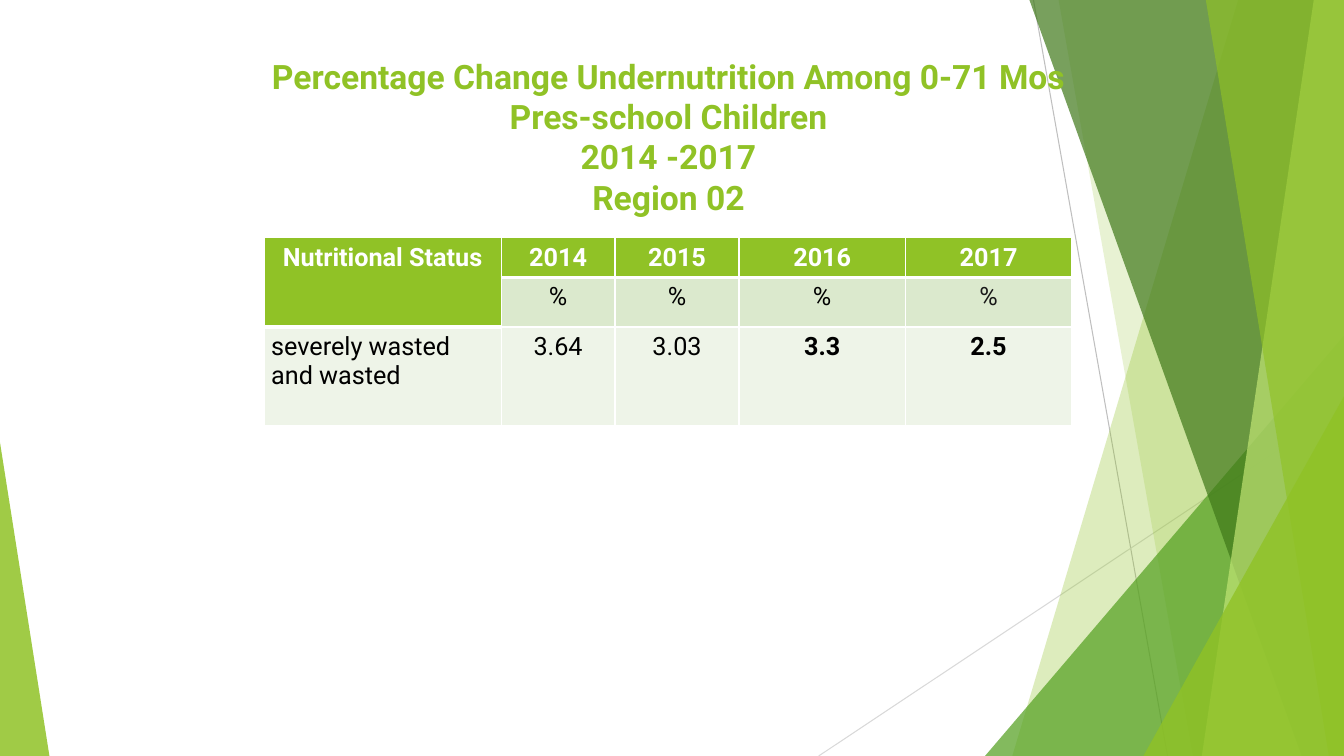
from lxml import etree
from pptx import Presentation
from pptx.dml.color import RGBColor
from pptx.enum.shapes import MSO_CONNECTOR, MSO_SHAPE
from pptx.enum.text import MSO_ANCHOR, PP_ALIGN
from pptx.oxml.ns import qn
from pptx.util import Inches, Pt

STRAIGHT = MSO_CONNECTOR.STRAIGHT
TRIANGLE = MSO_SHAPE.ISOSCELES_TRIANGLE
TOP = MSO_ANCHOR.TOP
LEFT, CENTER = PP_ALIGN.LEFT, PP_ALIGN.CENTER

LIME = RGBColor(0x90, 0xC2, 0x26)
GREEN = RGBColor(0x54, 0xA0, 0x21)
FOREST = RGBColor(0x3F, 0x78, 0x19)
PALE = RGBColor(0xC0, 0xE4, 0x74)
BAND = RGBColor(0xDB, 0xE9, 0xCD)
MIST = RGBColor(0xEE, 0xF4, 0xE8)
GRAY = RGBColor(0xBF, 0xBF, 0xBF)
SILVER = RGBColor(0xD9, 0xD9, 0xD9)
WHITE = RGBColor(0xFF, 0xFF, 0xFF)
BLACK = RGBColor(0, 0, 0)
INK = RGBColor(0x18, 0x18, 0x18)

FONT = "Roboto"
WIDE, HIGH = 13.33, 7.5
TITLE = ["Percentage Change Undernutrition Among 0-71 Mos",
         "Pres-school Children", "2014 -2017", "Region 02"]
COLS = [2.35, 1.13, 1.23, 1.65, 1.65]
ROWS = [0.38, 0.49, 0.98]
FILLS = [LIME, BAND, MIST]
DATA = [
    ["Nutritional Status", "2014", "2015", "2016", "2017"],
    ["", "%", "%", "%", "%"],
    ["severely wasted and wasted", "3.64", "3.03", "3.3", "2.5"],
]
STRONG = ("3.3", "2.5")


def paint(shape, color, alpha):
    """Fill a shape with a see-through colour (alpha in percent), no outline."""
    shape.shadow.inherit = False
    shape.line.fill.background()
    shape.fill.solid()
    shape.fill.fore_color.rgb = color
    tint = shape.fill._xPr.find(".//" + qn("a:srgbClr"))
    etree.SubElement(tint, qn("a:alpha"), val=str(alpha * 1000))


def add_line(slide, x1, y1, x2, y2, color):
    line = slide.shapes.add_connector(
        STRAIGHT, Inches(x1), Inches(y1), Inches(x2), Inches(y2))
    line.line.color.rgb = color
    line.line.width = Pt(0.75)
    etree.SubElement(line._element.spPr, qn("a:effectLst"))


def add_facet(slide, top, foot, color, alpha):
    """Full-height panel: slanted left side, right side on the slide edge."""
    points = [(WIDE, 0), (WIDE, HIGH), (foot, HIGH)]
    pen = slide.shapes.build_freeform(Inches(top), 0)
    pen.add_line_segments([(Inches(x), Inches(y)) for x, y in points])
    paint(pen.convert_to_shape(), color, alpha)


def add_wedge(slide, left, top, width, apex, color, alpha):
    """Triangle standing on the bottom edge of the slide."""
    wedge = slide.shapes.add_shape(
        TRIANGLE, Inches(left), Inches(top), Inches(width), Inches(HIGH - top))
    wedge.adjustments[0] = apex
    paint(wedge, color, alpha)


def add_decor(slide):
    add_line(slide, 10.25, 0, 11.58, HIGH, GRAY)
    add_line(slide, WIDE, 4.03, 8.12, HIGH, SILVER)
    add_facet(slide, 12.28, 10.04, LIME, 30)
    add_facet(slide, 10.5, 11.83, LIME, 20)
    add_wedge(slide, 9.77, 3.33, 3.56, 1, GREEN, 72)
    add_facet(slide, 10.21, 12.91, FOREST, 70)
    add_facet(slide, 13.03, 11.92, PALE, 70)
    add_facet(slide, 11.96, 13.18, LIME, 65)
    add_wedge(slide, 11.34, 3.93, 1.99, 1, LIME, 80)
    add_wedge(slide, 0, 4.39, 0.49, 0, LIME, 85)


def style(para, size, color, bold, align):
    para.alignment = align
    for run in para.runs:
        run.font.name = FONT
        run.font.size = Pt(size)
        run.font.bold = bold
        run.font.color.rgb = color


def set_title(slide):
    title = slide.shapes.title
    title.left, title.top = Inches(1.92), Inches(0.5)
    title.width, title.height = Inches(9.42), Inches(1.25)
    frame = title.text_frame
    frame.text = "\v".join(TITLE)
    frame.word_wrap = True
    frame.vertical_anchor = TOP
    style(frame.paragraphs[0], 24, LIME, True, CENTER)
    slide.shapes._spTree.append(title._element)  # bring in front of the panels


def add_edges(cell, bottom):
    """White cell borders: 1 pt, with the bottom one given in points."""
    props = cell._tc.get_or_add_tcPr()
    for side, width in (("L", 1), ("R", 1), ("T", 1), ("B", bottom)):
        edge = etree.SubElement(props, qn("a:ln" + side), w=str(Pt(width)))
        fill = etree.SubElement(edge, qn("a:solidFill"))
        etree.SubElement(fill, qn("a:srgbClr"), val=str(WHITE))


def fill_cell(cell, text, row, col):
    head = row == 0
    cell.margin_left = cell.margin_right = Inches(0.07)
    cell.margin_top = cell.margin_bottom = Inches(0.05)
    add_edges(cell, 3 if head else 1)
    cell.fill.solid()
    cell.fill.fore_color.rgb = FILLS[row]
    cell.text_frame.text = text
    style(cell.text_frame.paragraphs[0], 18, WHITE if head else BLACK,
          head or text in STRONG, CENTER if head or col else LEFT)


def add_grid(slide):
    frame = slide.shapes.add_table(
        len(ROWS), len(COLS), Inches(2.62), Inches(2.36),
        Inches(sum(COLS)), Inches(sum(ROWS)))
    table = frame.table
    for column, width in zip(table.columns, COLS):
        column.width = Inches(width)
    for line, height in zip(table.rows, ROWS):
        line.height = Inches(height)
    for row, texts in enumerate(DATA):
        for col, text in enumerate(texts):
            fill_cell(table.cell(row, col), text, row, col)
    table.cell(0, 0).merge(table.cell(1, 0))
    last = table.cell(1, len(COLS) - 1).text_frame.paragraphs[0]
    last.runs[0].font.color.rgb = INK


def main():
    deck = Presentation()
    deck.slide_width, deck.slide_height = Inches(WIDE), Inches(HIGH)
    slide = deck.slides.add_slide(deck.slide_layouts[5])
    add_decor(slide)
    set_title(slide)
    add_grid(slide)
    deck.save("out.pptx")


if __name__ == "__main__":
    main()
